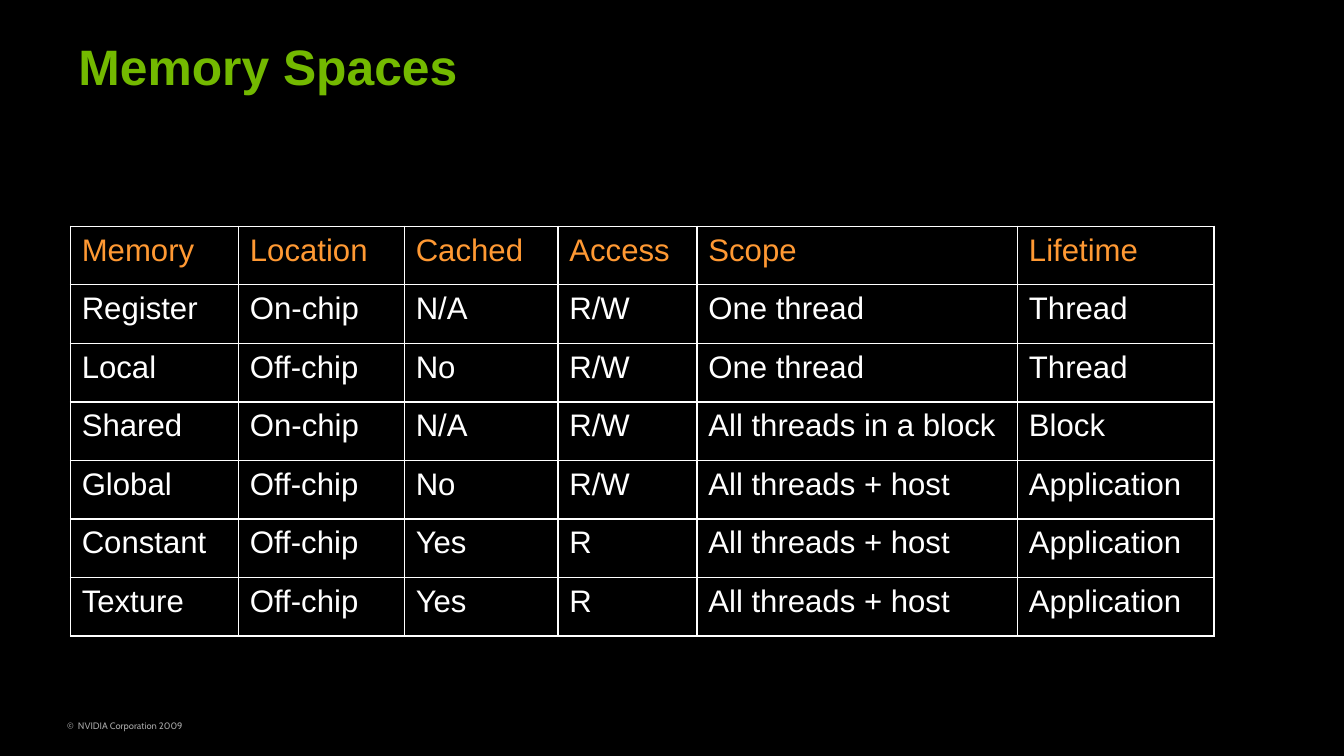
from lxml.etree import SubElement
from pptx import Presentation
from pptx.dml.color import RGBColor
from pptx.enum.text import MSO_ANCHOR, PP_ALIGN
from pptx.oxml import parse_xml
from pptx.oxml.ns import nsdecls
from pptx.util import Inches, Pt

COLORS = {
    "background": "000000",
    "title": "73B900",
    "header": "FF9933",
    "body": "FFFFFF",
    "border": "FFFFFF",
    "footer": "A6A6A6",
}
COLUMN_WIDTHS = [1.5, 1.48, 1.37, 1.24, 2.86, 1.75]
MEMORY_SPACES = [
    ["Memory", "Location", "Cached", "Access", "Scope", "Lifetime"],
    ["Register", "On-chip", "N/A", "R/W", "One thread", "Thread"],
    ["Local", "Off-chip", "No", "R/W", "One thread", "Thread"],
    ["Shared", "On-chip", "N/A", "R/W", "All threads in a block", "Block"],
    ["Global", "Off-chip", "No", "R/W", "All threads + host", "Application"],
    ["Constant", "Off-chip", "Yes", "R", "All threads + host", "Application"],
    ["Texture", "Off-chip", "Yes", "R", "All threads + host", "Application"],
]


def format_text(para, size, color, name="Arial", bold=False):
    para.alignment = PP_ALIGN.LEFT
    for span in para.runs:
        span.font.name = name
        span.font.size = Pt(size)
        span.font.bold = bold
        span.font.color.rgb = RGBColor.from_string(COLORS[color])


def add_title(page, box):
    title = page.shapes.title
    title.left, title.top, title.width, title.height = map(Inches, box)
    title.text_frame.text = "Memory Spaces"
    title.text_frame.vertical_anchor = MSO_ANCHOR.TOP
    format_text(title.text_frame.paragraphs[0], 32, "title", bold=True)


def add_footer(page, box):
    footer = page.shapes.add_textbox(*map(Inches, box))
    footer.text_frame.word_wrap = True
    footer.text_frame.text = "©  NVIDIA Corporation 2009"
    format_text(footer.text_frame.paragraphs[0], 6, "footer", "Cabin")


def add_borders(cell):
    properties = cell._tc.get_or_add_tcPr()
    for position, side in enumerate("LRTB"):
        line = parse_xml(f'<a:ln{side} {nsdecls("a")} w="{Pt(1)}"><a:solidFill/></a:ln{side}>')
        SubElement(line[0], f"{{{line.nsmap['a']}}}srgbClr", val=COLORS["border"])
        properties.insert(position, line)


def format_cell(cell, text, color):
    cell.text_frame.text = text
    cell.margin_left = cell.margin_right = Inches(0.06)
    cell.margin_top = cell.margin_bottom = Inches(0.06)
    cell.vertical_anchor = MSO_ANCHOR.TOP
    cell.fill.background()
    add_borders(cell)
    para = cell.text_frame.paragraphs[0]
    para._p.get_or_add_pPr().set("marL", str(Inches(0.04)))
    format_text(para, 20, color)


def add_memory_table(page, box):
    rows, columns = len(MEMORY_SPACES), len(COLUMN_WIDTHS)
    left, top, width, height = map(Inches, box)
    table = page.shapes.add_table(rows, columns, left, top, width, height).table
    table.first_row = False
    table.horz_banding = False
    for column, share in zip(table.columns, COLUMN_WIDTHS):
        column.width = int(width * share / sum(COLUMN_WIDTHS))
    for index, values in enumerate(MEMORY_SPACES):
        table.rows[index].height = int(height / rows)
        for position, text in enumerate(values):
            format_cell(table.cell(index, position), text, "body" if index else "header")


def main():
    deck = Presentation()
    deck.slide_width, deck.slide_height = Inches(12), Inches(6.75)
    page = deck.slides.add_slide(deck.slide_layouts[5])
    page.background.fill.solid()
    page.background.fill.fore_color.rgb = RGBColor.from_string(COLORS["background"])
    add_footer(page, (0.5, 6.38, 2.25, 0.2))
    add_title(page, (0.6, 0.27, 10.07, 0.63))
    add_memory_table(page, (0.63, 2.02, 10.21, 3.66))
    deck.save("out.pptx")


if __name__ == "__main__":
    main()
